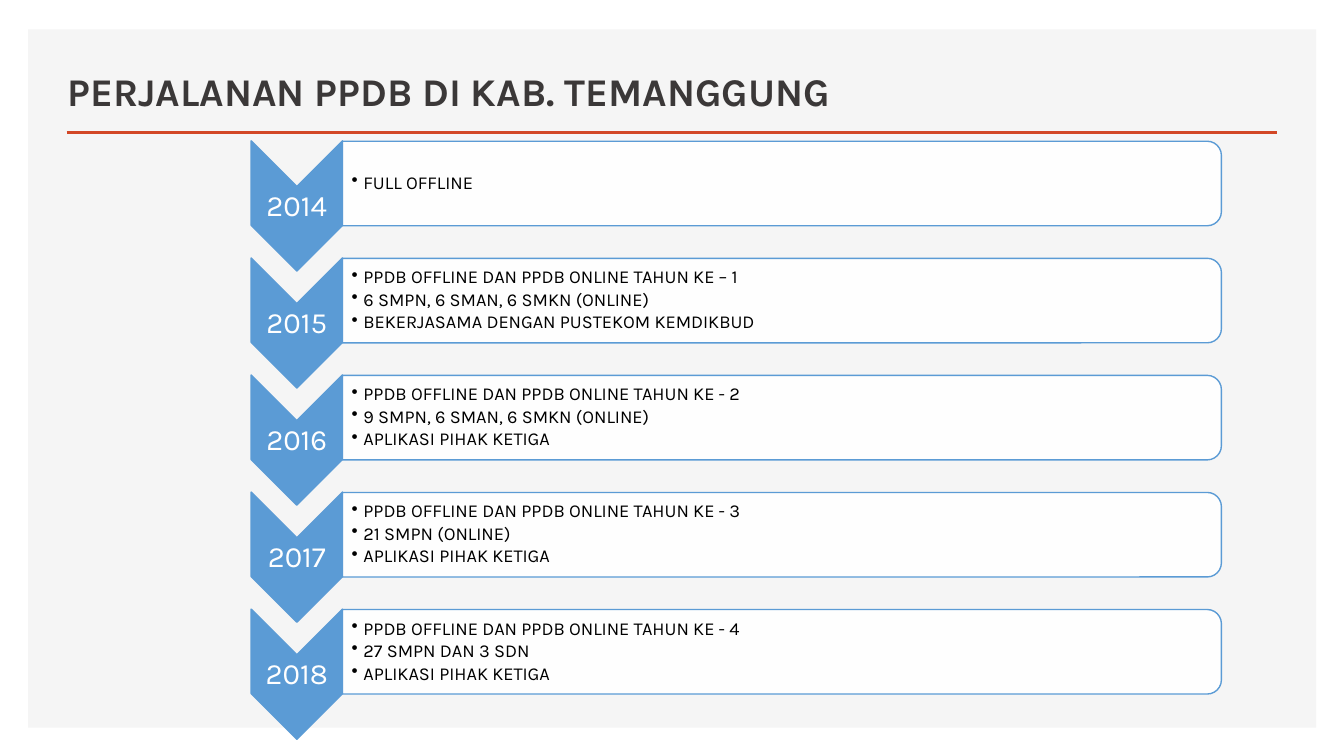
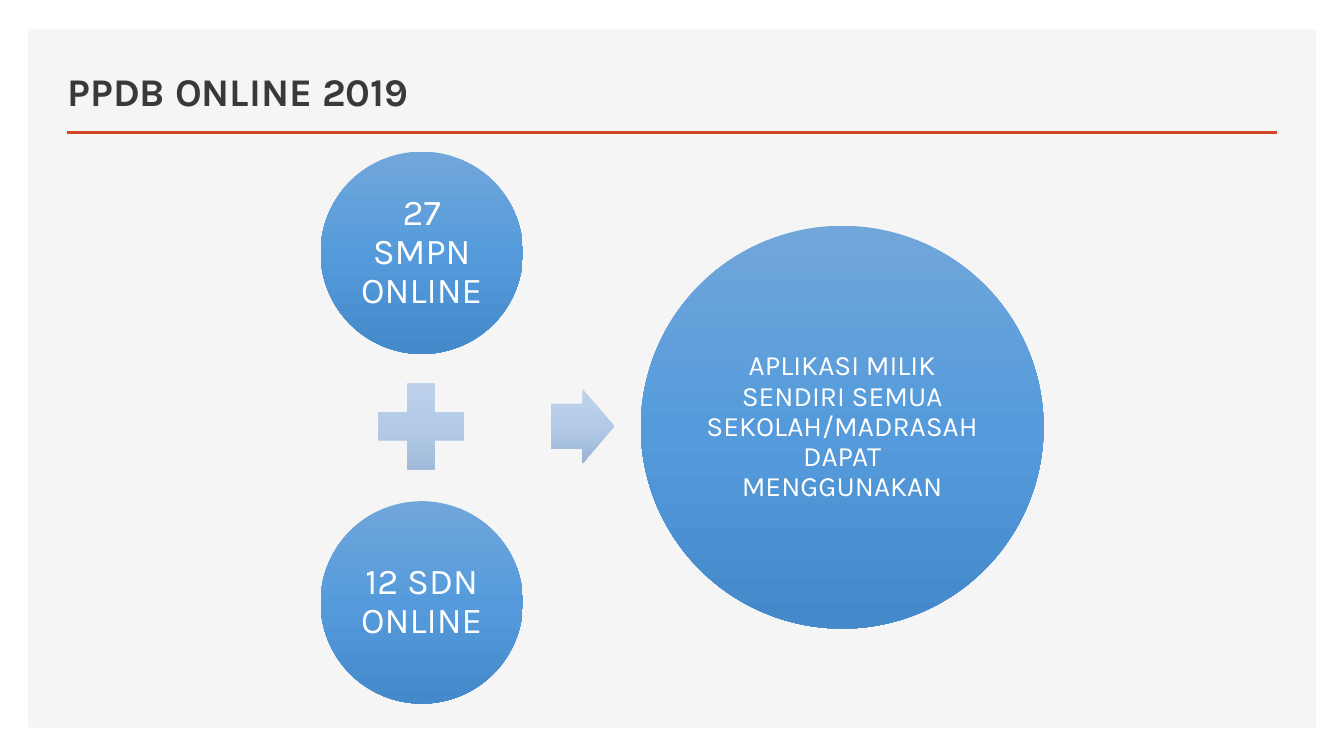
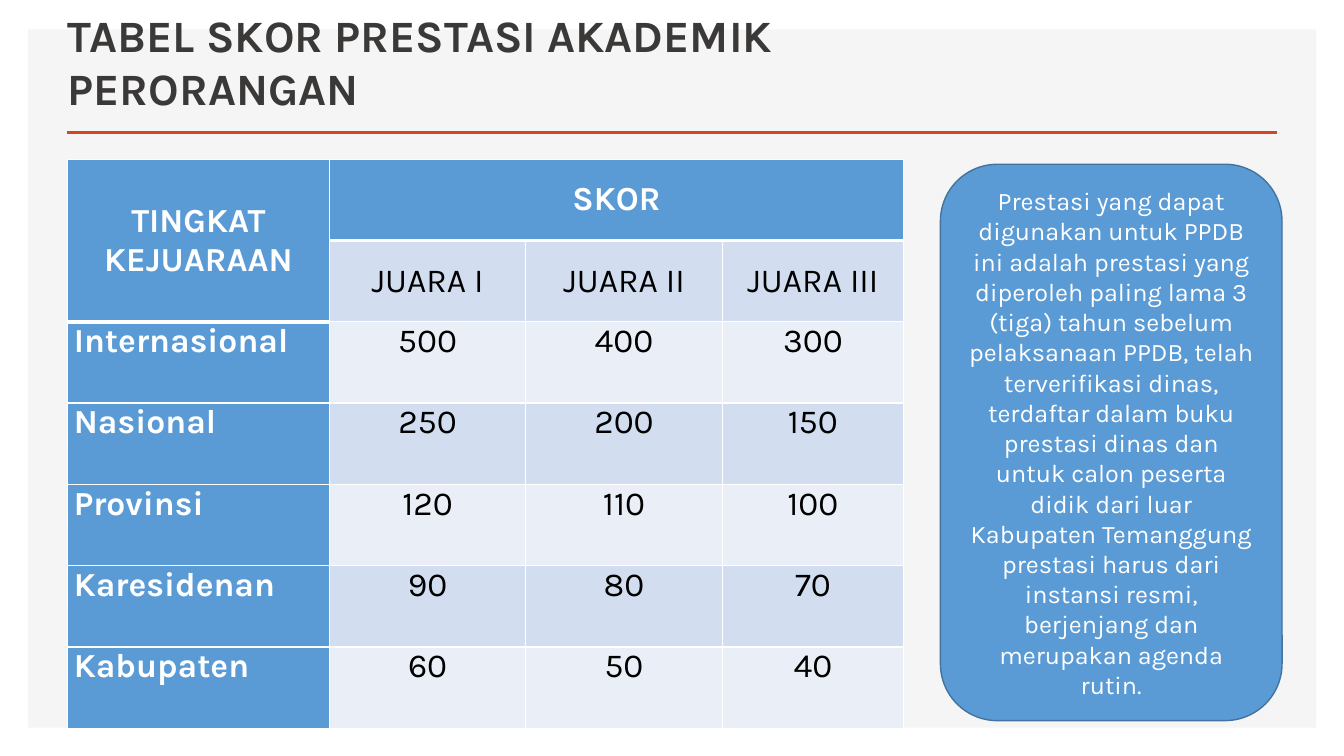
import copy

import lxml.etree
import pptx
import pptx.dml.color
import pptx.enum.shapes
import pptx.enum.text
import pptx.oxml.ns
import pptx.util

Cm = pptx.util.Cm
Pt = pptx.util.Pt
RGB = pptx.dml.color.RGBColor
KIND = pptx.enum.shapes.MSO_SHAPE
ALIGN = pptx.enum.text.PP_ALIGN
ANCHOR = pptx.enum.text.MSO_ANCHOR
qn = pptx.oxml.ns.qn

FONT = "Karla"
WHITE = RGB(0xFF, 0xFF, 0xFF)
BLACK = RGB(0, 0, 0)
GREY = RGB(0xF5, 0xF5, 0xF5)
DARK = RGB(0x3B, 0x38, 0x38)
RED = RGB(0xD2, 0x47, 0x26)
BLUE = RGB(0x5B, 0x9B, 0xD5)
EDGE = RGB(0x43, 0x73, 0x9E)
BANDS = (RGB(0xEA, 0xEF, 0xF7), RGB(0xD2, 0xDE, 0xEF))
BALL = (RGB(0x71, 0xA6, 0xDB), RGB(0x55, 0x9B, 0xDB), RGB(0x44, 0x8A, 0xCA))
PALE = (RGB(0xC0, 0xD2, 0xEB), RGB(0xB3, 0xCB, 0xE9), RGB(0x9B, 0xB4, 0xD3))

YEARS = [
    ("2014", ["FULL OFFLINE"]),
    ("2015", ["PPDB OFFLINE DAN PPDB ONLINE TAHUN KE – 1",
              "6 SMPN, 6 SMAN, 6 SMKN (ONLINE)",
              "BEKERJASAMA DENGAN PUSTEKOM KEMDIKBUD"]),
    ("2016", ["PPDB OFFLINE DAN PPDB ONLINE TAHUN KE - 2",
              "9 SMPN, 6 SMAN, 6 SMKN (ONLINE)",
              "APLIKASI PIHAK KETIGA"]),
    ("2017", ["PPDB OFFLINE DAN PPDB ONLINE TAHUN KE - 3",
              "21 SMPN (ONLINE)",
              "APLIKASI PIHAK KETIGA"]),
    ("2018", ["PPDB OFFLINE DAN PPDB ONLINE TAHUN KE - 4",
              "27 SMPN DAN 3 SDN",
              "APLIKASI PIHAK KETIGA"]),
]
SCORES = [
    ("TINGKAT KEJUARAAN", "SKOR", "", ""),
    ("", "JUARA I", "JUARA II", "JUARA III"),
    ("Internasional", "500", "400", "300"),
    ("Nasional", "250", "200", "150"),
    ("Provinsi", "120", "110", "100"),
    ("Karesidenan", "90", "80", "70"),
    ("Kabupaten", "60", "50", "40"),
]
NOTE = (
    "Prestasi yang dapat digunakan untuk PPDB ini adalah prestasi yang "
    "diperoleh paling lama 3 (tiga) tahun sebelum pelaksanaan PPDB, telah "
    "terverifikasi dinas, terdaftar dalam buku prestasi dinas dan untuk calon "
    "peserta didik dari luar Kabupaten Temanggung prestasi harus dari instansi "
    "resmi, berjenjang dan merupakan agenda rutin."
)


def write(frame, *lines, size, color=WHITE, bold=False, align=ALIGN.CENTER,
          space=1.0, after=0, bullet=False):
    for i, line in enumerate(lines):
        para = frame.add_paragraph() if i else frame.paragraphs[0]
        para.alignment = align
        para.line_spacing = space
        para.space_after = Pt(after)
        if bullet:
            props = para._p.get_or_add_pPr()
            props.set("marL", str(Cm(0.3)))
            props.set("indent", str(-Cm(0.3)))
            lxml.etree.SubElement(props, qn("a:buChar")).set("char", "•")
        run = para.add_run()
        run.text = line
        run.font.name = FONT
        run.font.size = Pt(size)
        run.font.bold = bold
        run.font.color.rgb = color


def set_frame(frame, pad=None, left=None, anchor=ANCHOR.MIDDLE):
    frame.word_wrap = True
    frame.auto_size = pptx.enum.text.MSO_AUTO_SIZE.NONE
    frame.vertical_anchor = anchor
    if pad is not None:
        frame.margin_left = Cm(pad if left is None else left)
        frame.margin_right = frame.margin_top = frame.margin_bottom = Cm(pad)
    return frame


def add_text(slide, x, y, w, h, left=None):
    box = slide.shapes.add_textbox(Cm(x), Cm(y), Cm(w), Cm(h))
    return set_frame(box.text_frame, 0.02, left)


def add_shape(slide, kind, x, y, w, h, fill, line=None, turn=False):
    if turn:
        x, y, w, h = x + (w - h) / 2, y + (h - w) / 2, h, w
    shape = slide.shapes.add_shape(kind, Cm(x), Cm(y), Cm(w), Cm(h))
    shape.shadow.inherit = False
    shape.rotation = 90 if turn else 0
    if isinstance(fill, RGB):
        shape.fill.solid()
        shape.fill.fore_color.rgb = fill
    else:
        shade(shape, fill)
    if line is None:
        shape.line.fill.background()
    else:
        shape.line.color.rgb = line
        shape.line.width = Pt(1)
    return shape


def shade(shape, colors):
    shape.fill.gradient()
    shape.fill.gradient_angle = 270
    stops = shape.element.spPr.find(".//" + qn("a:gsLst"))
    stops.insert(1, copy.deepcopy(stops[0]))
    for i, stop in enumerate(shape.fill.gradient_stops):
        stop.position = i / 2
        stop.color.rgb = colors[i]


def add_frame(slide, layout):
    panel = add_shape(slide, KIND.RECTANGLE, 0.71, 0.74, 32.46, 17.6, GREY)
    rule = slide.shapes.add_connector(
        pptx.enum.shapes.MSO_CONNECTOR.STRAIGHT,
        Cm(1.68), Cm(3.33), Cm(32.18), Cm(3.33))
    rule.line.color.rgb = RED
    rule.line.width = Pt(2)
    lxml.etree.SubElement(rule.element.spPr, qn("a:effectLst"))
    for i, part in enumerate((panel, rule)):
        layout.shapes.element.insert(2 + i, part.element)


def add_slide(deck, layout, title, width, size=28):
    slide = deck.slides.add_slide(layout)
    head = slide.shapes.title
    head.left, head.top, head.width, head.height = (
        Cm(1.45), Cm(1.24), Cm(width), Cm(1.78))
    write(set_frame(head.text_frame, anchor=ANCHOR.BOTTOM), title,
          size=size, color=DARK, bold=True, align=ALIGN.LEFT)
    return slide


def add_year(slide, y, year, items):
    add_shape(slide, KIND.CHEVRON, 6.33, y, 2.3, 3.28, BLUE, BLUE, turn=True)
    write(add_text(slide, 6.33, y + 1.16, 2.3, 1), year, size=21, space=0.9)
    bar = add_shape(slide, KIND.ROUND_2_SAME_RECTANGLE, 8.63, y + 0.01,
                    22.15, 2.13, WHITE, BLUE, turn=True)
    tint = bar.element.spPr.find(qn("a:solidFill"))[0]
    lxml.etree.SubElement(tint, qn("a:alpha")).set("val", "90000")
    write(add_text(slide, 8.61, y + 0.12, 22.05, 1.9, left=0.25), *items,
          size=13, color=BLACK, align=ALIGN.LEFT, space=0.9, after=2,
          bullet=True)


def add_ball(slide, x, y, d, text, size):
    ball = add_shape(slide, KIND.OVAL, x, y, d, d, BALL)
    write(set_frame(ball.text_frame, 0.09), text, size=size, space=0.9)


def edge_cell(cell, sides):
    props = cell._tc.get_or_add_tcPr()
    for i, (side, width) in enumerate(sides.items()):
        line = lxml.etree.Element(qn("a:ln" + side), w=str(Pt(width)))
        fill = lxml.etree.SubElement(line, qn("a:solidFill"))
        lxml.etree.SubElement(fill, qn("a:srgbClr")).set("val", str(WHITE))
        props.insert(i, line)


def add_scores(slide, x, y, widths, height):
    table = slide.shapes.add_table(
        len(SCORES), len(widths), Cm(x), Cm(y),
        Cm(sum(widths)), Cm(height * len(SCORES))).table
    for col, width in zip(table.columns, widths):
        col.width = Cm(width)
    for r, row in enumerate(SCORES):
        table.rows[r].height = Cm(height)
        for c, text in enumerate(row):
            cell = table.cell(r, c)
            head = r == 0 or c == 0
            cell.fill.solid()
            cell.fill.fore_color.rgb = BLUE if head else BANDS[r % 2]
            cell.margin_left = cell.margin_right = Cm(0.16)
            cell.margin_top = cell.margin_bottom = 0
            cell.vertical_anchor = ANCHOR.MIDDLE if r < 2 else ANCHOR.TOP
            thick = r == 0 or (r == 1 and c == 0)
            above = r == 1 and c > 0
            edge_cell(cell, {"L": 1, "R": 1, "T": 3 if above else 1,
                             "B": 3 if thick else 1})
            if text:
                write(cell.text_frame, text, size=24, bold=head,
                      color=WHITE if head else BLACK,
                      align=ALIGN.LEFT if r > 1 and c == 0 else ALIGN.CENTER)
    table.cell(0, 0).merge(table.cell(1, 0))
    table.cell(0, 1).merge(table.cell(0, 3))


def main():
    deck = pptx.Presentation()
    deck.slide_width, deck.slide_height = Cm(33.87), Cm(19.05)
    layout = deck.slide_layouts[5]

    slide = add_slide(deck, layout, "PERJALANAN PPDB DI KAB. TEMANGGUNG", 21.18)
    add_frame(slide, layout)
    for i, (year, items) in enumerate(YEARS):
        add_year(slide, 3.55 + 2.95 * i, year, items)

    slide = add_slide(deck, layout, "PPDB ONLINE 2019", 22.5)
    add_ball(slide, 8.08, 3.82, 5.1, "27 SMPN ONLINE", 26)
    add_shape(slide, KIND.MATH_PLUS, 9.14, 9.27, 2.95, 2.95, PALE)
    add_ball(slide, 8.08, 12.63, 5.1, "12 SDN ONLINE", 26)
    arrow = add_shape(slide, KIND.RIGHT_ARROW, 13.88, 9.8, 1.6, 1.88, PALE)
    arrow.adjustments[0] = 0.6
    add_ball(slide, 16.15, 5.69, 10.15, "APLIKASI MILIK SENDIRI SEMUA "
             "SEKOLAH/MADRASAH DAPAT MENGGUNAKAN", 20)

    slide = add_slide(deck, layout, "TABEL SKOR PRESTASI AKADEMIK PERORANGAN",
                      24.97, 32)
    add_scores(slide, 1.7, 4.01, (6.6, 4.95, 4.95, 4.57), 2.05)
    note = add_shape(slide, KIND.ROUNDED_RECTANGLE, 23.7, 4.14, 8.61, 14.02,
                     BLUE, EDGE)
    write(set_frame(note.text_frame), NOTE, size=18)

    deck.save("out.pptx")


if __name__ == "__main__":
    main()
